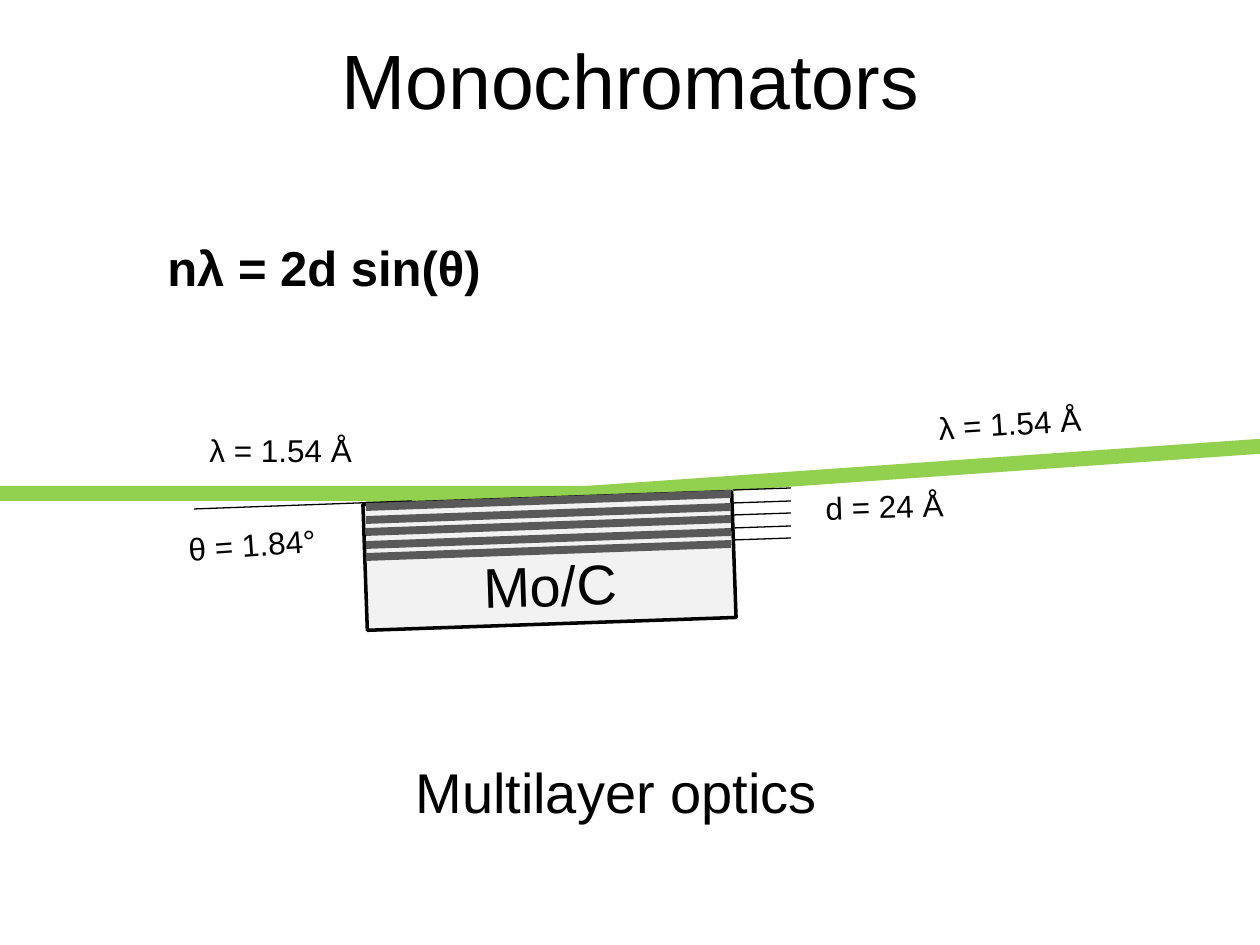
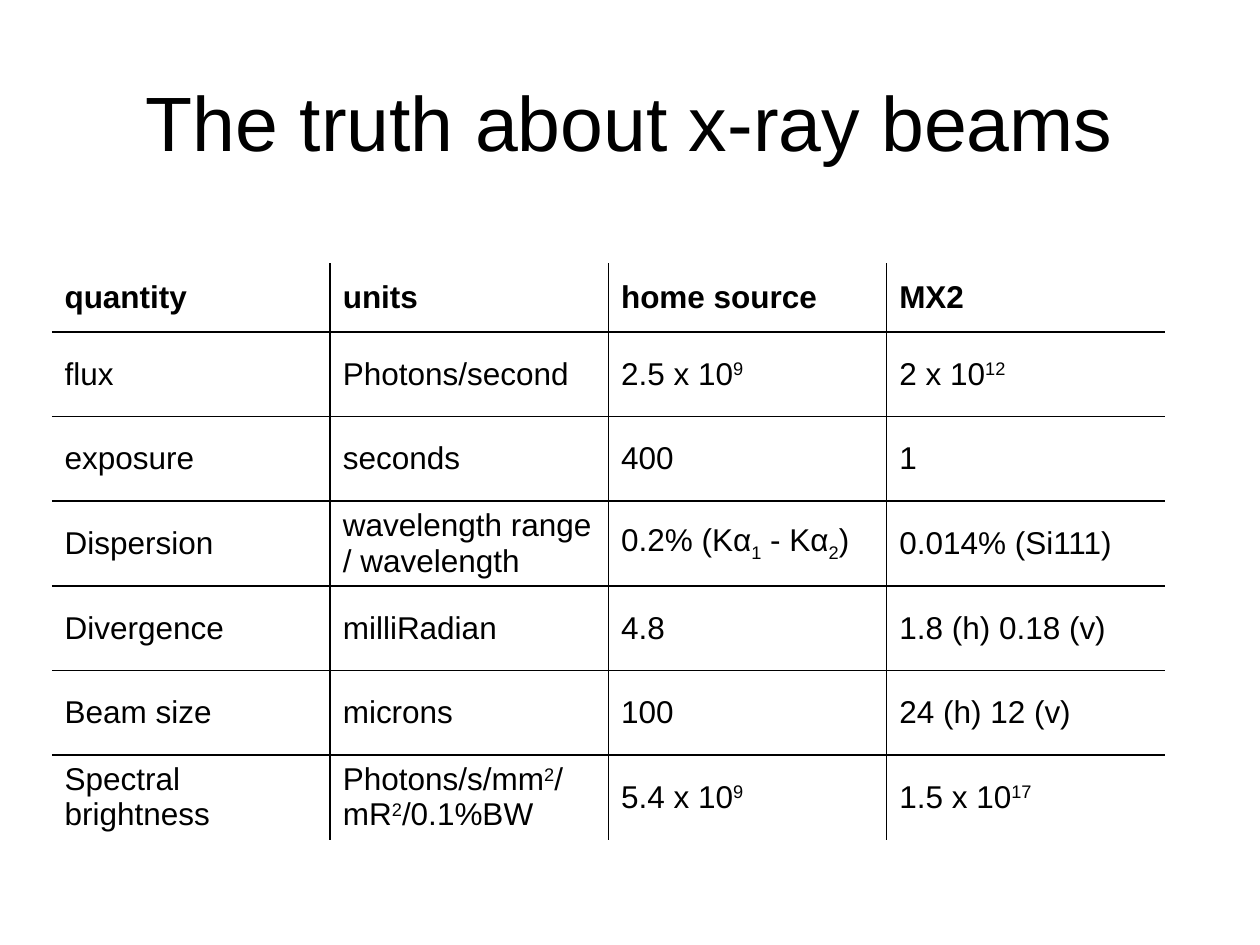
from lxml.etree import SubElement
from pptx import Presentation
from pptx.dml.color import RGBColor
from pptx.enum.shapes import MSO_CONNECTOR as Link, MSO_SHAPE as Preset
from pptx.enum.text import MSO_ANCHOR as Anchor, MSO_AUTO_SIZE as Fit, PP_ALIGN as Align
from pptx.oxml.ns import qn
from pptx.util import Emu, Pt

EMU_PER_INCH, PX_PER_INCH = 914400, 126
BLACK, WHITE = "000000", "FFFFFF"
BEAM_GREEN, CRYSTAL_GREY, LAYER_GREY = "92D050", "F2F2F2", "595959"

TITLE = {"name": "Arial", "size": Pt(44)}
CAPTION = {"name": "Arial", "size": Pt(32)}
FORMULA = {"name": "Arial", "size": Pt(28), "bold": True}
LABEL = {"name": "Arial", "size": Pt(18), "bold": False}
HEADING = {**LABEL, "bold": True}

# A piece after "|" that starts with ^ is raised, with _ lowered
BASELINES = {"^": "30000", "_": "-25000"}
BEAM_TABLE = [
    ["quantity", "units", "home source", "MX2"],
    ["flux", "Photons/second", "2.5 x 10|^9", "2 x 10|^12"],
    ["exposure", "seconds", "400", "1"],
    ["Dispersion", "wavelength range / wavelength",
     "0.2% (Kα|_1| - Kα|_2|)", "0.014% (Si111)"],
    ["Divergence", "milliRadian", "4.8", "1.8 (h) 0.18 (v)"],
    ["Beam size", "microns", "100", "24 (h) 12 (v)"],
    ["Spectral\nbrightness", "Photons/s/mm|^2|/\nmR|^2|/0.1%BW",
     "5.4 x 10|^9", "1.5 x 10|^17"],
]


def px(length):
    return Emu(round(length * EMU_PER_INCH / PX_PER_INCH))


def rgb(value):
    return RGBColor.from_string(value)


def write(frame, text, style, align=Align.LEFT):
    for number, line in enumerate(text.split("\n")):
        paragraph = frame.add_paragraph() if number else frame.paragraphs[0]
        paragraph.alignment = align
        for piece in line.split("|"):
            run = paragraph.add_run()
            baseline = BASELINES.get(piece[0])
            run.text = piece[1:] if baseline else piece
            for key, value in style.items():
                setattr(run.font, key, value)
            run.font.color.rgb = rgb(BLACK)
            if baseline:
                run._r.get_or_add_rPr().set("baseline", baseline)


def add_titled_slide(deck, text, left, top, width, height):
    slide = deck.slides.add_slide(deck.slide_layouts[5])
    title = slide.shapes.title
    place = {"left": left, "top": top, "width": width, "height": height}
    for side, length in place.items():
        setattr(title, side, px(length))
    title.text_frame.vertical_anchor = Anchor.MIDDLE
    write(title.text_frame, text, TITLE, Align.CENTER)
    return slide


def add_label(slide, text, box, style=LABEL, rotation=0):
    label = slide.shapes.add_textbox(*map(px, box))
    label.rotation = rotation
    label.text_frame.word_wrap = False
    label.text_frame.auto_size = Fit.SHAPE_TO_FIT_TEXT
    write(label.text_frame, text, style)


def add_block(slide, box, fill, rotation=0, outline=None):
    block = slide.shapes.add_shape(Preset.RECTANGLE, *map(px, box))
    block.shadow.inherit = False
    block.rotation = rotation
    block.fill.solid()
    block.fill.fore_color.rgb = rgb(fill)
    if outline:
        block.line.color.rgb = rgb(outline)
        block.line.width = Pt(2)
    else:
        block.line.fill.background()
    return block


def add_line(slide, start, end, color=BLACK, weight=0.75):
    line = slide.shapes.add_connector(Link.STRAIGHT, *map(px, start + end))
    line.line.color.rgb = rgb(color)
    line.line.width = Pt(weight)
    SubElement(line._element.spPr, qn("a:effectLst"))


def set_borders(cell, drawn):
    properties = cell._tc.get_or_add_tcPr()
    for side in "LRTB":
        border = SubElement(properties, qn(f"a:ln{side}"), w=str(Pt(1)))
        if side in drawn:
            paint = SubElement(border, qn("a:solidFill"))
            SubElement(paint, qn("a:srgbClr"), val=BLACK)
        else:
            SubElement(border, qn("a:noFill"))


def add_inner_ruled_table(slide, rows, left, top, width, header, height):
    last_row, last_column = len(rows) - 1, len(rows[0]) - 1
    table = slide.shapes.add_table(last_row + 1, last_column + 1, px(left), px(top),
                                   px(width), px(height)).table
    table.first_row = table.horz_banding = False
    for column in table.columns:
        column.width = px(width) // (last_column + 1)
    for r, texts in enumerate(rows):
        table.rows[r].height = px(height - header) // last_row if r else px(header)
        for c, text in enumerate(texts):
            cell = table.cell(r, c)
            # Only the edges between cells are ruled
            inner = {"L": c > 0, "R": c < last_column, "T": r > 0, "B": r < last_row}
            set_borders(cell, [side for side in inner if inner[side]])
            cell.fill.solid()
            cell.fill.fore_color.rgb = rgb(WHITE)
            cell.vertical_anchor = Anchor.MIDDLE
            write(cell.text_frame, text, LABEL if r else HEADING)


def build_monochromators(deck):
    slide = add_titled_slide(deck, "Monochromators", 95, 0, 1071, 158)

    # Reflected and incoming beam
    add_block(slide, (365, 470, 900, 15), BEAM_GREEN, rotation=356)
    add_block(slide, (0, 486, 717, 15), BEAM_GREEN)

    add_label(slide, "nλ = 2d sin(θ)", (155, 231, 339, 72), FORMULA)
    add_label(slide, "λ = 1.54 Å", (197, 425, 169, 50))
    add_label(slide, "θ = 1.84°", (176, 519, 154, 50), rotation=355.9)
    add_label(slide, "λ = 1.54 Å", (926, 398, 169, 50), rotation=356.2)

    # Tilted multilayer crystal
    crystal = add_block(slide, (365, 498, 369, 126), CRYSTAL_GREY, 358, BLACK)
    crystal.text_frame.vertical_anchor = Anchor.BOTTOM
    write(crystal.text_frame, "Mo/C", CAPTION, Align.CENTER)
    add_label(slide, "d = 24 Å", (813, 481, 145, 50), rotation=358)
    add_line(slide, (412, 501), (194, 509))

    # Layers, with spacing marks to their right
    for layer in range(5):
        drop = round(12.6 * layer)
        add_line(slide, (791, 488 + drop), (733, 490 + drop))
        add_line(slide, (731, 494 + drop), (366, 507 + drop), LAYER_GREY, 4.5)

    add_label(slide, "Multilayer optics", (403, 751, 431, 81), CAPTION)


def build_beam_truth(deck):
    slide = add_titled_slide(deck, "The truth about x-ray beams", 0, 0, 1260, 242)
    add_inner_ruled_table(slide, BEAM_TABLE, left=52, top=263, width=1113,
                          header=69, height=577)


def main():
    deck = Presentation()
    deck.slide_width, deck.slide_height = px(1260), px(945)
    build_monochromators(deck)
    build_beam_truth(deck)
    deck.save("out.pptx")


if __name__ == "__main__":
    main()
